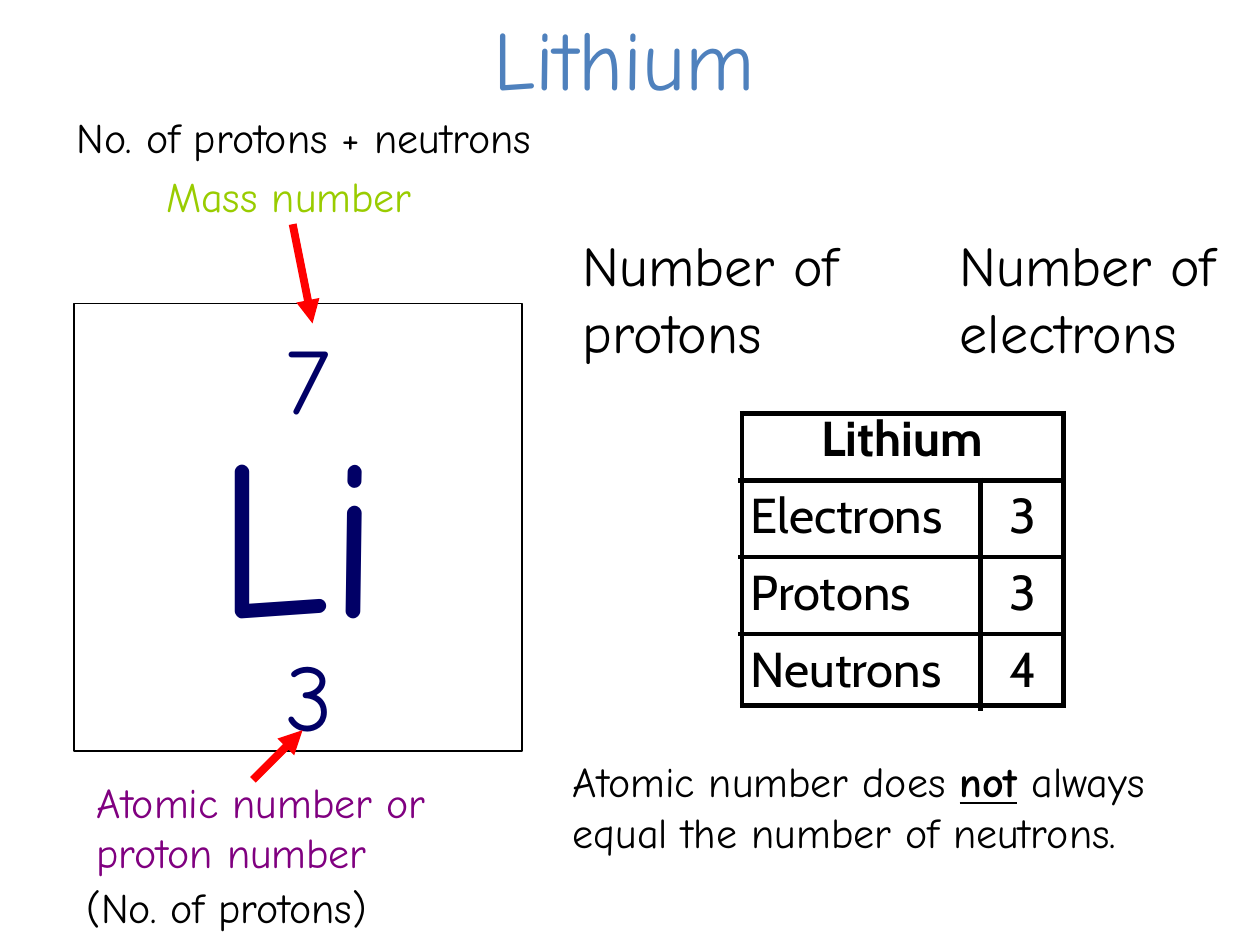
from lxml.etree import SubElement
from pptx import Presentation
from pptx.dml.color import RGBColor
from pptx.enum.shapes import MSO_CONNECTOR, MSO_SHAPE
from pptx.enum.text import MSO_ANCHOR, MSO_AUTO_SIZE, PP_ALIGN
from pptx.oxml.ns import qn
from pptx.util import Cm, Pt

HEX = {"black": "000000", "white": "FFFFFF", "navy": "010066", "blue": "4F81BD",
       "red": "FF0000", "lime": "99CC00", "plum": "800080"}
FONT, GRID_FONT = "Comic Neue", "Cabin"
SIDES = {"l": "a:lnL", "r": "a:lnR", "t": "a:lnT", "b": "a:lnB"}


def tint(name):
    return RGBColor.from_string(HEX[name])


def write(frame, *parts, size=24, color="black", font=FONT, bold=False,
          align=PP_ALIGN.LEFT):
    """Fill a text frame; a part given as a 1-tuple is bold and underlined."""
    para = frame.paragraphs[0]
    para.alignment = align
    for part in parts:
        strong = isinstance(part, tuple)
        run = para.add_run()
        run.text = part[0] if strong else part
        run.font.name, run.font.size = font, Pt(size)
        run.font.bold, run.font.underline = bold or strong, strong
        run.font.color.rgb = tint(color)


def label(slide, box, *parts, **style):
    frame = slide.shapes.add_textbox(*map(Cm, box)).text_frame
    frame.word_wrap = True
    write(frame, *parts, **style)


def arrow(slide, start, end):
    line = slide.shapes.add_connector(MSO_CONNECTOR.STRAIGHT, *map(Cm, start + end))
    line.line.color.rgb, line.line.width = tint("red"), Pt(4.5)
    props = line._element.spPr
    SubElement(props.find(qn("a:ln")), qn("a:tailEnd"), type="triangle")
    SubElement(props, qn("a:effectLst"))


def edge(cell, sides):
    """Draw the named sides of a cell in black and clear the others."""
    props = cell._tc.get_or_add_tcPr()
    for side, tag in SIDES.items():
        line = SubElement(props, qn(tag), w=str(Pt(3)))
        if side in sides:
            fill = SubElement(line, qn("a:solidFill"))
            SubElement(fill, qn("a:srgbClr"), val=HEX["black"])
        else:
            SubElement(line, qn("a:noFill"))
    cell.fill.background()


def grid(slide, left, top, cols, rows):
    shape = slide.shapes.add_table(len(rows), len(cols), Cm(left), Cm(top),
                                   Cm(sum(cols)), Cm(sum(rows)))
    table = shape.table
    table.first_row = table.horz_banding = False
    for col, width in zip(table.columns, cols):
        col.width = Cm(width)
    for row, height in zip(table.rows, rows):
        row.height = Cm(height)
    return table


def heading(slide, box):
    title = slide.shapes.title
    title.left, title.top, title.width, title.height = map(Cm, box)
    frame = title.text_frame
    frame.auto_size = MSO_AUTO_SIZE.NONE
    frame.vertical_anchor = MSO_ANCHOR.TOP
    write(frame, "Lithium", size=48, color="blue")


def element(slide, x, y, side):
    """Symbol tile with its two numbers, their arrows and captions."""
    tile = slide.shapes.add_shape(MSO_SHAPE.RECTANGLE, *map(Cm, (x, y, side, side)))
    tile.shadow.inherit = False
    tile.fill.solid()
    tile.fill.fore_color.rgb = tint("white")
    tile.line.color.rgb, tile.line.width = tint("black"), Pt(1)
    tile.text_frame.word_wrap = False
    tile.text_frame.vertical_anchor = MSO_ANCHOR.MIDDLE
    write(tile.text_frame, "Li", size=129, color="navy", align=PP_ALIGN.CENTER)
    for text, drop in (("7", 0.2), ("3", 6.6)):
        label(slide, (x + 4, y + drop, 2.2, 2.54), text, size=54, color="navy")
    arrow(slide, (x + 3.6, y + 9.6), (x + 4.6, y + 8.6))
    arrow(slide, (x + 4.4, y - 1.6), (x + 4.8, y + 0.4))
    label(slide, (x - 0.2, y - 4, 11, 1.27), "No. of protons + neutrons")
    label(slide, (x + 1.6, y - 2.8, 8, 1.27), "Mass number", color="lime")
    label(slide, (x + 0.2, y + 9.4, 8, 2.31), "Atomic number or proton number",
          color="plum")
    label(slide, (x, y + 11.53, 6.9, 1.27), "(No. of protons)")


def compare(slide, x, y):
    label(slide, (x, y, 6.4, 2.97), "Number of protons", size=32)
    label(slide, (x + 7.6, y, 6.3, 2.97), "Number of electrons", size=32)


def counts(slide, x, y):
    """Particle table inside a heavy frame."""
    data = (("Electrons", "3"), ("Protons", "3"), ("Neutrons", "4"))
    table = grid(slide, x, y, (4.88, 1.73), [1.55] * 4)
    style = {"size": 28, "font": GRID_FONT}
    head = table.cell(0, 0)
    head.merge(table.cell(0, 1))
    write(head.text_frame, "Lithium", bold=True, align=PP_ALIGN.CENTER, **style)
    for col in range(2):
        edge(table.cell(0, col), "b")
    for row, (name, count) in enumerate(data, 1):
        low = "b" if row < len(data) else ""
        left, right = table.cell(row, 0), table.cell(row, 1)
        write(left.text_frame, name, **style)
        write(right.text_frame, count, align=PP_ALIGN.CENTER, **style)
        edge(left, "tr" + low)
        edge(right, "tl" + low)
    frame = grid(slide, x + 0.08, y + 0.2, [6.48], [5.89])
    edge(frame.cell(0, 0), "lrtb")


def main():
    deck = Presentation()
    deck.slide_width, deck.slide_height = Cm(25.4), Cm(19.05)
    slide = deck.slides.add_slide(deck.slide_layouts[5])
    heading(slide, (9.7, 0, 6.43, 2.31))
    element(slide, 1.5, 6.12, 9.02)
    compare(slide, 11.5, 4.52)
    counts(slide, 14.88, 8.13)
    label(slide, (11.3, 15.11, 14.1, 2.31), "Atomic number does ", ("not",),
          " always equal the number of neutrons.")
    deck.save("out.pptx")


if __name__ == "__main__":
    main()
